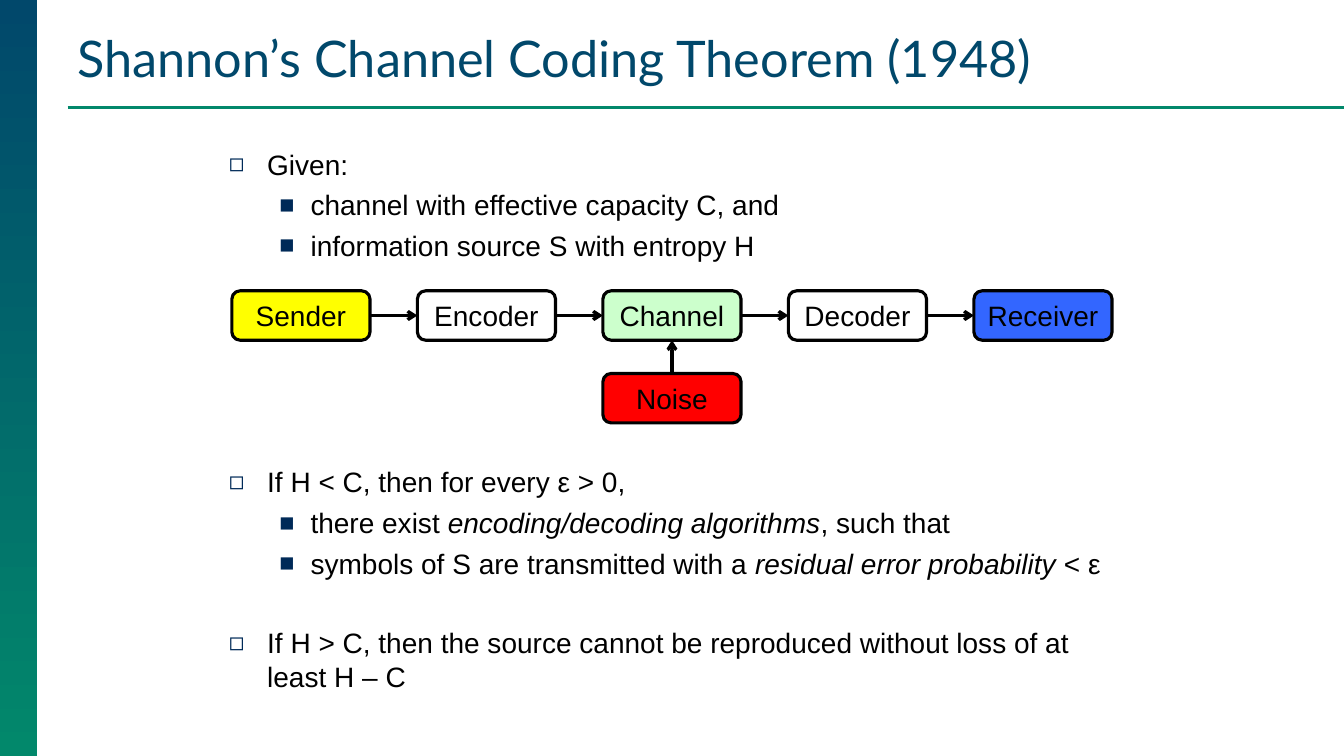
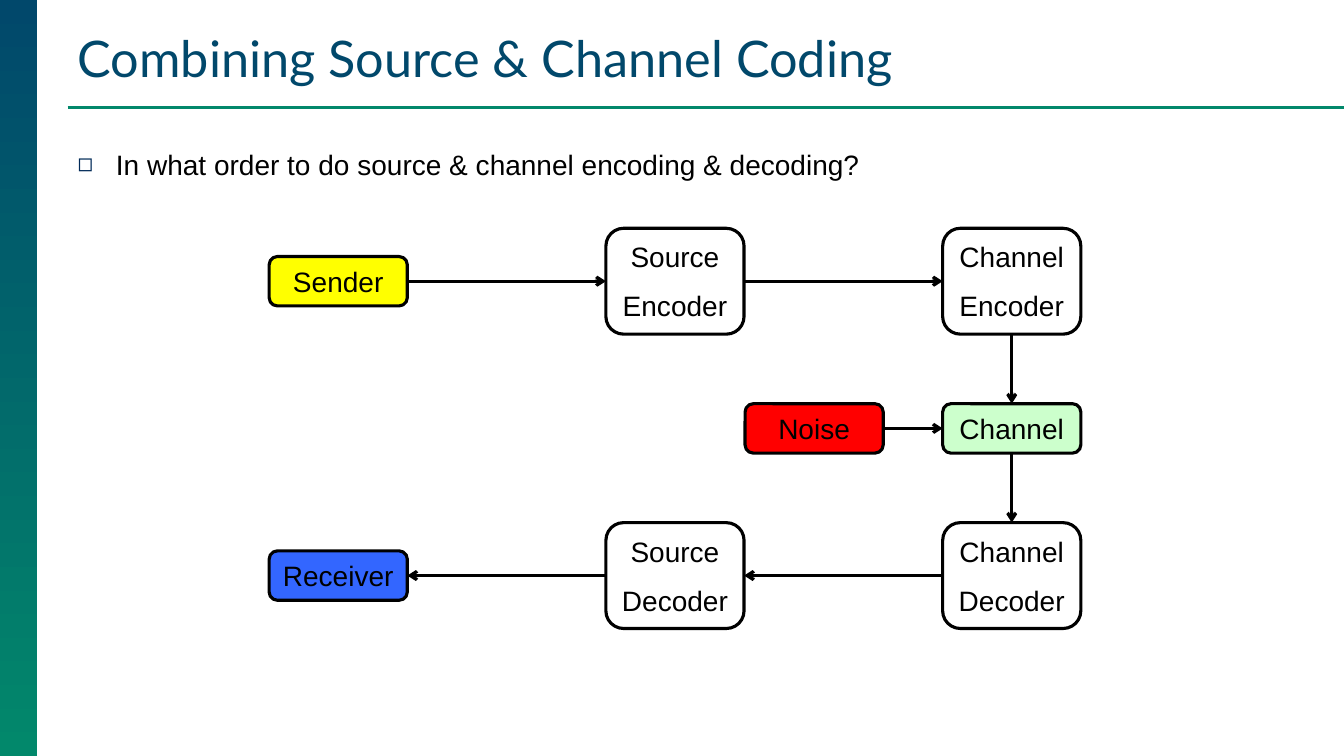
import pptx
import pptx.util
import pptx.dml.color
import pptx.enum.shapes
import pptx.enum.text
import pptx.oxml.ns
import lxml.etree

Inches = pptx.util.Inches
Pt = pptx.util.Pt

NAVY, GREEN, BULLET = "01486B", "02886B", "002A58"
BLACK, WHITE = "000000", "FFFFFF"
YELLOW, BLUE, MINT, RED = "FFFF00", "3366FF", "CCFFCC", "FF0000"
TITLE_FONT, BODY_FONT = "Lato", "Arial"
BODY_SIZE = 20
LINE_WIDTH = Pt(2.25)
BOX_WIDTH, BOX_HEIGHT, TALL_HEIGHT = 1.37, 0.49, 1.05
TOP, LEFT, BOTTOM, RIGHT = range(4)
BULLETS = [("◻", 0.38, 0.38), ("■", 0.81, 0.31)]


def colour(value):
    return pptx.dml.color.RGBColor.from_string(value)


def add_xml(parent, tag, **attributes):
    return lxml.etree.SubElement(parent, pptx.oxml.ns.qn(tag), attributes)


def add_run(paragraph, text, font=BODY_FONT, size=BODY_SIZE, fill=BLACK, italic=False):
    run = paragraph.add_run()
    run.text = text
    run.font.name = font
    run.font.size = Pt(size)
    run.font.italic = italic
    run.font.color.rgb = colour(fill)


def add_paragraph(frame, index):
    return frame.add_paragraph() if index else frame.paragraphs[0]


def place(shape, left, top, width, height):
    shape.left, shape.top = Inches(left), Inches(top)
    shape.width, shape.height = Inches(width), Inches(height)


def add_line(shapes, x1=0, y1=0, x2=0, y2=0, fill=BLACK):
    line = shapes.add_connector(
        pptx.enum.shapes.MSO_CONNECTOR.STRAIGHT,
        Inches(x1), Inches(y1), Inches(x2), Inches(y2))
    line.line.color.rgb = colour(fill)
    line.line.width = LINE_WIDTH
    add_xml(line._element.spPr, "a:effectLst")
    return line


def decorate_layout(layout, slide):
    band = slide.shapes.add_shape(
        pptx.enum.shapes.MSO_SHAPE.RECTANGLE, 0, 0, Inches(0.37), Inches(7.5))
    band.shadow.inherit = False
    band.line.fill.background()
    band.fill.gradient()
    band.fill.gradient_angle = 270
    for stop, value in zip(band.fill.gradient_stops, (NAVY, GREEN)):
        stop.color.rgb = colour(value)
    rule = add_line(slide.shapes, 0.67, 1.07, 13.33, 1.07, GREEN)
    for shape in (band, rule):
        layout.shapes._spTree.append(shape._element)
    place(layout.placeholders[0], 0.67, 0.21, 12.38, 0.71)


def set_title(slide, text):
    frame = slide.shapes.title.text_frame
    frame.auto_size = pptx.enum.text.MSO_AUTO_SIZE.NONE
    frame.vertical_anchor = pptx.enum.text.MSO_ANCHOR.BOTTOM
    paragraph = frame.paragraphs[0]
    paragraph.alignment = pptx.enum.text.PP_ALIGN.LEFT
    add_run(paragraph, text, TITLE_FONT, 36, NAVY)


def set_bullet(paragraph, level):
    character, margin, hanging = BULLETS[level]
    paragraph.level = level
    properties = paragraph._p.get_or_add_pPr()
    properties.set("marL", str(Inches(margin)))
    properties.set("indent", str(-Inches(hanging)))
    add_xml(add_xml(properties, "a:buClr"), "a:srgbClr", val=BULLET)
    add_xml(properties, "a:buSzPct", val="90000")
    add_xml(properties, "a:buFont", typeface=BODY_FONT)
    add_xml(properties, "a:buChar", char=character)


def set_body(slide, position, items):
    body = slide.placeholders[1]
    place(body, *position)
    frame = body.text_frame
    frame.auto_size = pptx.enum.text.MSO_AUTO_SIZE.NONE
    for index, (level, space, runs) in enumerate(items):
        paragraph = add_paragraph(frame, index)
        set_bullet(paragraph, level)
        paragraph.space_before = Pt(space)
        for number, text in enumerate(runs):
            add_run(paragraph, text, italic=number % 2 == 1)


def add_box(slide, left, middle, lines, fill=WHITE):
    height = TALL_HEIGHT if len(lines) > 1 else BOX_HEIGHT
    box = slide.shapes.add_shape(
        pptx.enum.shapes.MSO_SHAPE.ROUNDED_RECTANGLE, Inches(left),
        Inches(middle - height / 2), Inches(BOX_WIDTH), Inches(height))
    box.shadow.inherit = False
    box.fill.solid()
    box.fill.fore_color.rgb = colour(fill)
    box.line.color.rgb = colour(BLACK)
    box.line.width = LINE_WIDTH
    frame = box.text_frame
    frame.word_wrap = True
    frame.vertical_anchor = pptx.enum.text.MSO_ANCHOR.MIDDLE
    for index, text in enumerate(lines):
        paragraph = add_paragraph(frame, index)
        paragraph.alignment = pptx.enum.text.PP_ALIGN.CENTER
        paragraph.space_before = Pt(11 if index else 0)
        add_run(paragraph, text)
    return box


def add_arrow(slide, start, start_side, end, end_side):
    arrow = add_line(slide.shapes)
    arrow.begin_connect(start, start_side)
    arrow.end_connect(end, end_side)
    add_xml(arrow.line._get_or_add_ln(), "a:tailEnd", type="arrow")


def build_theorem(slide):
    set_title(slide, "Shannon’s Channel Coding Theorem (1948)")
    set_body(slide, (2.17, 1.41, 8.92, 5.73), [
        (0, 0, ["Given:"]),
        (1, 5, ["channel with effective capacity C, and"]),
        (1, 5, ["information source S with entropy H"]),
        (0, 145, ["If H < C, then for every ε > 0,"]),
        (1, 5, ["there exist ", "encoding/decoding algorithms", ", such that"]),
        (1, 5, ["symbols of S are transmitted with a ",
                "residual error probability ", "< ε"]),
        (0, 33, ["If H > C, then the source cannot be reproduced "
                 "without loss of at least H – C"]),
    ])
    stages = [("Sender", YELLOW), ("Encoder", WHITE), ("Channel", MINT),
              ("Decoder", WHITE), ("Receiver", BLUE)]
    boxes = [add_box(slide, 2.3 + 1.84 * index, 3.13, [name], fill)
             for index, (name, fill) in enumerate(stages)]
    for start, end in zip(boxes, boxes[1:]):
        add_arrow(slide, start, RIGHT, end, LEFT)
    noise = add_box(slide, 5.98, 3.95, ["Noise"], RED)
    add_arrow(slide, noise, TOP, boxes[2], BOTTOM)


def build_combination(slide):
    set_title(slide, "Combining Source & Channel Coding")
    set_body(slide, (0.67, 1.41, 11.89, 5.49), [
        (0, 0, ["In what order to do source & channel encoding & decoding?"]),
    ])
    columns = [2.67 + 3.34 * index for index in range(3)]
    rows = [2.79 + 1.46 * index for index in range(3)]
    sender = add_box(slide, columns[0], rows[0], ["Sender"], YELLOW)
    source_encoder = add_box(slide, columns[1], rows[0], ["Source", "Encoder"])
    channel_encoder = add_box(slide, columns[2], rows[0], ["Channel", "Encoder"])
    noise = add_box(slide, 7.39, rows[1], ["Noise"], RED)
    channel = add_box(slide, columns[2], rows[1], ["Channel"], MINT)
    receiver = add_box(slide, columns[0], rows[2], ["Receiver"], BLUE)
    source_decoder = add_box(slide, columns[1], rows[2], ["Source", "Decoder"])
    channel_decoder = add_box(slide, columns[2], rows[2], ["Channel", "Decoder"])
    for start, start_side, end, end_side in [
        (sender, RIGHT, source_encoder, LEFT),
        (source_encoder, RIGHT, channel_encoder, LEFT),
        (channel_encoder, BOTTOM, channel, TOP),
        (noise, RIGHT, channel, LEFT),
        (channel, BOTTOM, channel_decoder, TOP),
        (channel_decoder, LEFT, source_decoder, RIGHT),
        (source_decoder, LEFT, receiver, RIGHT),
    ]:
        add_arrow(slide, start, start_side, end, end_side)


def main():
    presentation = pptx.Presentation()
    presentation.slide_width = Inches(13.33)
    presentation.slide_height = Inches(7.5)
    layout = presentation.slide_layouts[1]
    theorem, combination = [presentation.slides.add_slide(layout) for _ in range(2)]
    decorate_layout(layout, theorem)
    build_theorem(theorem)
    build_combination(combination)
    presentation.save("out.pptx")


if __name__ == "__main__":
    main()
